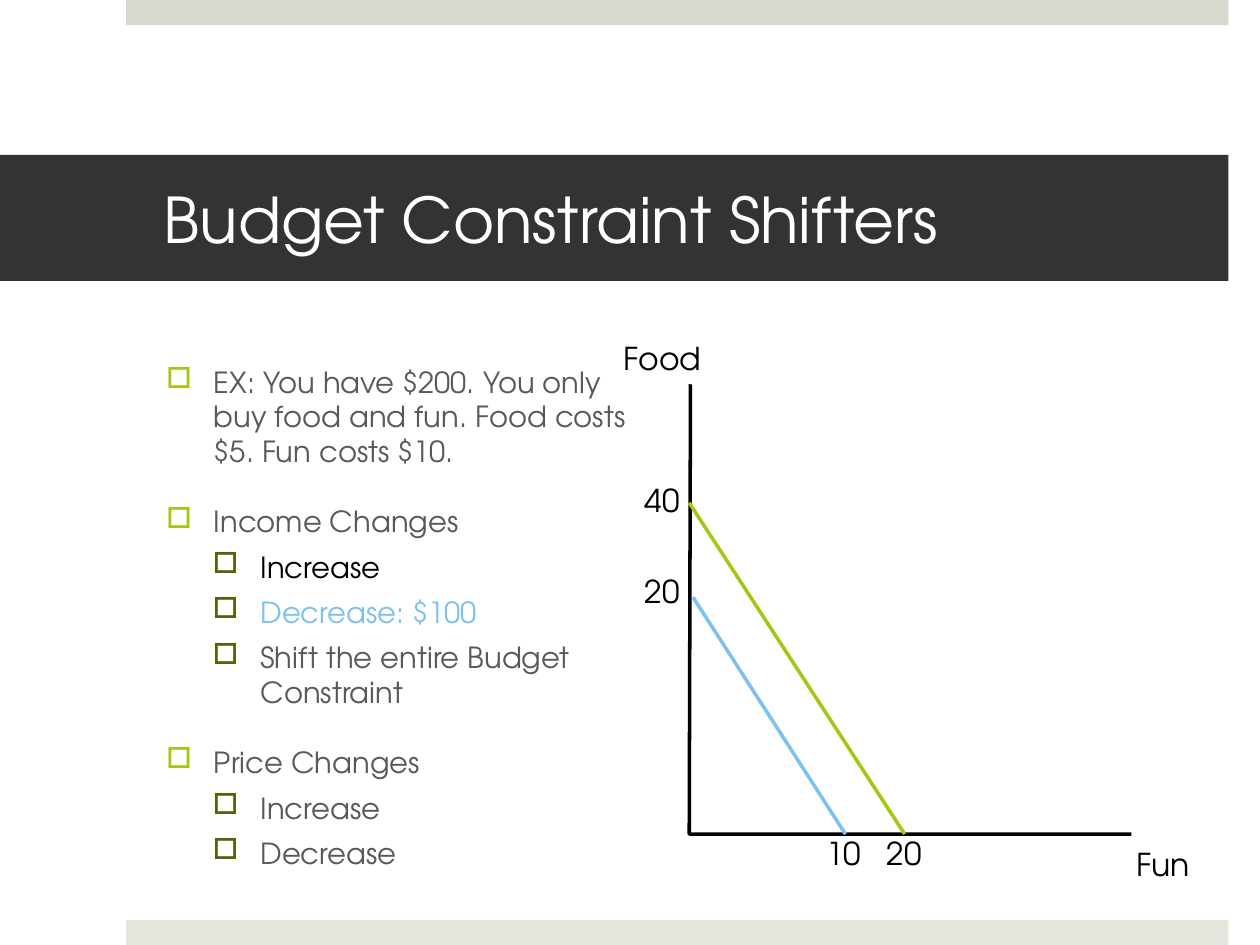
import pptx
import pptx.dml.color
import pptx.enum.shapes
import pptx.enum.text
import pptx.oxml.ns
import pptx.oxml.xmlchemy
import pptx.util
from dataclasses import dataclass
from lxml import etree
from pptx.util import Inches


@dataclass(frozen=True)
class Theme:
    font: str = "TeX Gyre Adventor"
    title_size: float = 36
    body_size: float = 16.6
    label_size: float = 18
    line_width: float = 2
    white: str = "FFFFFF"
    black: str = "000000"
    band: str = "333333"
    top_bar: str = "D6D9CD"
    bottom_bar: str = "E4E6DE"
    gray: str = "595959"
    green: str = "A2C816"
    dark_green: str = "51640B"
    blue: str = "7DC1EF"


theme = Theme()


def rgb(value):
    return pptx.dml.color.RGBColor.from_string(value)


def format_runs(paragraph, size, color):
    for run in paragraph.runs:
        run.font.name = theme.font
        run.font.size = pptx.util.Pt(size)
        run.font.color.rgb = rgb(color)


presentation = pptx.Presentation()
presentation.slide_width = Inches(10)
presentation.slide_height = Inches(7.5)
slide = presentation.slides.add_slide(presentation.slide_layouts[5])

# Bars along the top and bottom edges
for top, color in [(0, theme.top_bar), (7.3, theme.bottom_bar)]:
    bar = slide.shapes.add_shape(
        pptx.enum.shapes.MSO_SHAPE.RECTANGLE,
        Inches(1), Inches(top), Inches(8.75), Inches(0.2))
    bar.shadow.inherit = False
    bar.fill.solid()
    bar.fill.fore_color.rgb = rgb(color)
    bar.line.fill.background()

# Title band
title = slide.shapes.title
title.left, title.top = Inches(0), Inches(1.23)
title.width, title.height = Inches(9.75), Inches(1)
title.fill.solid()
title.fill.fore_color.rgb = rgb(theme.band)
title.text_frame.text = "Budget Constraint Shifters"
title.text_frame.margin_left = Inches(1.3)
title.text_frame.margin_right = Inches(0.3)
title.text_frame.vertical_anchor = pptx.enum.text.MSO_ANCHOR.MIDDLE
title_paragraph = title.text_frame.paragraphs[0]
title_paragraph.alignment = pptx.enum.text.PP_ALIGN.LEFT
format_runs(title_paragraph, theme.title_size, theme.white)

# Bulleted list: level, text, colour
items = [
    (0, "EX: You have $200. You only buy food and fun. Food costs $5. Fun costs $10.",
     theme.gray),
    (0, "Income Changes", theme.gray),
    (1, "Increase", theme.black),
    (1, "Decrease: $100", theme.blue),
    (1, "Shift the entire Budget Constraint", theme.gray),
    (0, "Price Changes", theme.gray),
    (1, "Increase", theme.gray),
    (1, "Decrease", theme.gray),
]
# Per level: left margin, space before, bullet colour
levels = [(0.38, 20, theme.green), (0.75, 6, theme.dark_green)]
body = slide.shapes.add_textbox(Inches(1.22), Inches(2.84), Inches(3.9), Inches(4.03))
body.text_frame.word_wrap = True
body.text_frame.text = "\n".join(text for level, text, color in items)
for paragraph, (level, text, color) in zip(body.text_frame.paragraphs, items):
    margin, space_before, bullet_color = levels[level]
    paragraph.level = level
    paragraph.space_before = pptx.util.Pt(space_before)
    format_runs(paragraph, theme.body_size, color)
    properties = paragraph._p.get_or_add_pPr()
    properties.set("marL", str(Inches(margin)))
    properties.set("indent", str(-Inches(0.38)))
    bullet = etree.SubElement(properties, pptx.oxml.ns.qn("a:buClr"))
    etree.SubElement(bullet, pptx.oxml.ns.qn("a:srgbClr"), val=bullet_color)
    etree.SubElement(properties, pptx.oxml.ns.qn("a:buChar"), char="□")

# Graph axes
builder = slide.shapes.build_freeform(Inches(5.48), Inches(3.05))
builder.add_line_segments(
    [(Inches(5.47), Inches(6.62)), (Inches(8.98), Inches(6.62))], close=False)
axes = builder.convert_to_shape()
axes.shadow.inherit = False
axes.fill.background()
axes.line.color.rgb = rgb(theme.black)
axes.line.width = pptx.util.Pt(theme.line_width)

# Budget lines, before and after the decrease in income
budget_lines = [
    (5.47, 3.99, 7.18, theme.green),
    (5.5, 4.74, 6.71, theme.blue),
]
for left, top, right, color in budget_lines:
    line = slide.shapes.add_connector(
        pptx.enum.shapes.MSO_CONNECTOR.STRAIGHT,
        Inches(left), Inches(top), Inches(right), Inches(6.62))
    line.line.color.rgb = rgb(color)
    line.line.width = pptx.util.Pt(theme.line_width)
    etree.SubElement(line._element.spPr, pptx.oxml.ns.qn("a:effectLst"))

# Axis names and intercepts
labels = [
    ("Food", 4.85, 2.64, 0.83),
    ("Fun", 8.92, 6.66, 0.63),
    ("40", 5.02, 3.77, 0.48),
    ("20", 5.02, 4.49, 0.48),
    ("10", 6.46, 6.57, 0.48),
    ("20", 6.94, 6.57, 0.48),
]
for text, left, top, width in labels:
    label = slide.shapes.add_textbox(
        Inches(left), Inches(top), Inches(width), Inches(0.4))
    label.text_frame.word_wrap = False
    label.text_frame.auto_size = pptx.enum.text.MSO_AUTO_SIZE.SHAPE_TO_FIT_TEXT
    label.text_frame.text = text
    format_runs(label.text_frame.paragraphs[0], theme.label_size, theme.black)

presentation.save("out.pptx")
